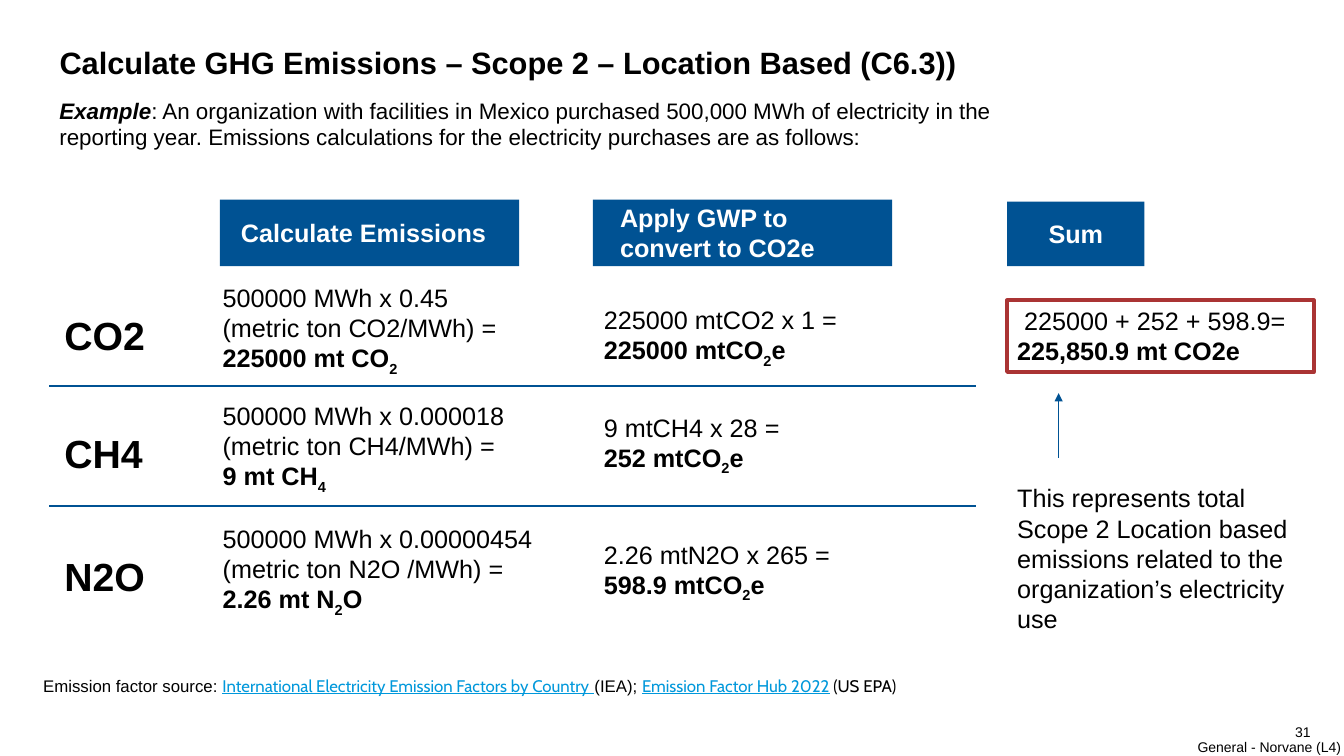
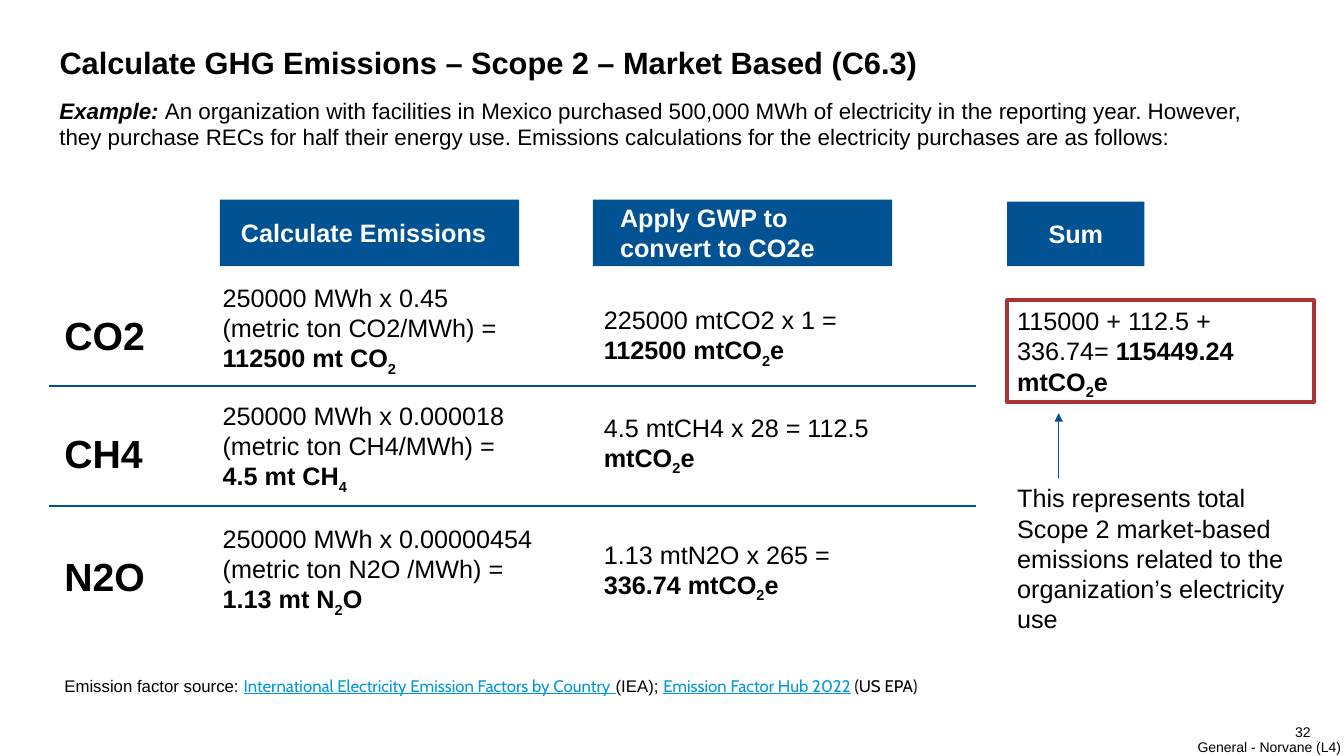
from lxml import etree
from pptx import Presentation
from pptx.dml.color import RGBColor
from pptx.enum.shapes import MSO_CONNECTOR, MSO_SHAPE
from pptx.enum.text import MSO_ANCHOR, MSO_AUTO_SIZE, PP_ALIGN
from pptx.oxml.ns import qn
from pptx.util import Inches, Pt

BLUE = RGBColor(0x00, 0x52, 0x93)
LINK = RGBColor(0x00, 0x98, 0xDB)
RED = RGBColor(0xAA, 0x34, 0x34)
BLACK = RGBColor(0x00, 0x00, 0x00)
WHITE = RGBColor(0xFF, 0xFF, 0xFF)
FONT = "Arial"
LINK_FONT = "Cabin"
RECTANGLE = MSO_SHAPE.RECTANGLE
STRAIGHT = MSO_CONNECTOR.STRAIGHT
TOP, MIDDLE, BOTTOM = MSO_ANCHOR.TOP, MSO_ANCHOR.MIDDLE, MSO_ANCHOR.BOTTOM
LEFT, RIGHT = PP_ALIGN.LEFT, PP_ALIGN.RIGHT
NO_AUTOFIT = MSO_AUTO_SIZE.NONE
TITLE_LAYOUT = 5

INSETS = (0.1, 0.05, 0.1, 0.05)
TITLE_AREA = (0.49, 0.1, 12.36, 0.75)
GRID_AREA = (0.49, 1.98, 9.19, 4.17)
SUM_AREA = (9.99, 2, 3.04, 4.36)
GASES = ("CO2", "CH4", "N2O")
ROW_TOPS = (0.77, 1.94, 3.16)
EMISSION_WIDTHS = (3.03, 3.03, 3.31)
GWP_SHIFTS = (0.22, 0.12, 0.16)
DIVIDERS = (1.85, 3.04)

SLIDES = [
    {
        "number": "31",
        "title": "Calculate GHG Emissions – Scope 2 – Location Based (C6.3))",
        "lead": "Example",
        "intro": ": An organization with facilities in Mexico purchased 500,000 MWh of "
                 "electricity in the reporting year. Emissions calculations for the "
                 "electricity purchases are as follows:",
        "intro_width": 9.81,
        "emissions": [
            ("500000 MWh x 0.45 (metric ton CO2/MWh) = ", "225000 mt CO_2"),
            ("500000 MWh x 0.000018 (metric ton CH4/MWh) = ", "9 mt CH_4"),
            ("500000 MWh x 0.00000454 (metric ton N2O /MWh) = ", "2.26 mt N_2_O"),
        ],
        "equivalents": [
            ("225000 mtCO2 x 1 = ", "225000 mtCO_2_e"),
            ("9 mtCH4 x 28 = ", "252 mtCO_2_e"),
            ("2.26 mtN2O x 265 = ", "598.9 mtCO_2_e"),
        ],
        "gwp_widths": (3.07, 2.3, 3.04),
        "sum": (" 225000 + 252 + 598.9= ", "225,850.9 mt CO2e"),
        "sum_height": 0.71,
        "arrow_top": 1.9,
        "note": "This represents total Scope 2 Location based emissions related to "
                "the organization’s electricity use",
        "source_left": 0.33,
    },
    {
        "number": "32",
        "title": "Calculate GHG Emissions – Scope 2 – Market Based (C6.3)",
        "lead": "Example: ",
        "intro": "An organization with facilities in Mexico purchased 500,000 MWh of "
                 "electricity in the reporting year. However, they purchase RECs for "
                 "half their energy use. Emissions calculations for the electricity "
                 "purchases are as follows:",
        "intro_width": 12.19,
        "emissions": [
            ("250000 MWh x 0.45 (metric ton CO2/MWh) = ", "112500 mt CO_2"),
            ("250000 MWh x 0.000018 (metric ton CH4/MWh) = ", "4.5 mt CH_4"),
            ("250000 MWh x 0.00000454 (metric ton N2O /MWh) = ", "1.13 mt N_2_O"),
        ],
        "equivalents": [
            ("225000 mtCO2 x 1 = ", "112500 mtCO_2_e"),
            ("4.5 mtCH4 x 28 = 112.5 ", "mtCO_2_e"),
            ("1.13 mtN2O x 265 = ", "336.74 mtCO_2_e"),
        ],
        "gwp_widths": (3.07, 3.07, 3.04),
        "sum": ("115000 + 112.5 + 336.74= ", "115449.24 mtCO_2_e"),
        "sum_height": 1.01,
        "arrow_top": 2.1,
        "note": "This represents total Scope 2 market-based emissions related to "
                "the organization’s electricity use",
        "source_left": 0.54,
    },
]


def write_text(box, text, size=18, color=BLACK, bold=False, align=LEFT,
               anchor=TOP, insets=INSETS):
    frame = box.text_frame
    frame.word_wrap = True
    frame.auto_size = NO_AUTOFIT
    frame.vertical_anchor = anchor
    (frame.margin_left, frame.margin_top,
     frame.margin_right, frame.margin_bottom) = map(Inches, insets)
    para = frame.paragraphs[0]
    para.alignment = align
    spans = [(text, {})] if isinstance(text, str) else text
    for words, style in spans:
        span = para.add_run()
        span.text = words
        font = span.font
        font.name = style.get("font", FONT)
        font.size = Pt(size)
        font.bold = style.get("bold", bold)
        font.italic = style.get("italic", False)
        font.underline = style.get("underline", False)
        font.color.rgb = style.get("color", color)
        if style.get("subscript"):
            span._r.get_or_add_rPr().set("baseline", "-25000")


def add_text(page, area, text, **style):
    box = page.shapes.add_textbox(*map(Inches, area))
    write_text(box, text, **style)


def add_rectangle(page, area, text, fill=None, line=None, **style):
    box = page.shapes.add_shape(RECTANGLE, *map(Inches, area))
    box.shadow.inherit = False
    if fill is None:
        box.fill.background()
    else:
        box.fill.solid()
        box.fill.fore_color.rgb = fill
    if line is None:
        box.line.fill.background()
    else:
        box.line.color.rgb = line
        box.line.width = Pt(3)
    write_text(box, text, **style)


def add_line(page, start, end, width, arrow=False):
    line = page.shapes.add_connector(STRAIGHT, *map(Inches, start + end))
    line.line.color.rgb = BLUE
    line.line.width = Pt(width)
    if arrow:
        etree.SubElement(line.line._get_or_add_ln(), qn("a:tailEnd"), type="triangle")
    etree.SubElement(line._element.spPr, qn("a:effectLst"))


def formula(plain, result):
    parts = enumerate(result.split("_"))
    return [(plain, {})] + [
        (part, {"bold": True, "subscript": index % 2 == 1}) for index, part in parts
    ]


def add_heading(page, area, text, indent, right=0.1):
    add_rectangle(page, area, text, fill=BLUE, color=WHITE, bold=True,
                  anchor=MIDDLE, insets=(indent, 0, right, 0))


def add_title(page, area, content):
    left, top, width, height = area
    title = page.shapes.title
    title.left, title.top, title.width, title.height = map(Inches, area)
    write_text(title, content["title"], size=22, bold=True, anchor=BOTTOM)
    intro = [(content["lead"], {"bold": True, "italic": True}), (content["intro"], {})]
    add_text(page, (left, top + 0.81, content["intro_width"], 0.64), intro, size=16)


def add_gas_grid(page, area, content):
    left, top, width, height = area
    add_heading(page, (left + 1.69, top, 2.97, 0.66), "Calculate Emissions", 0.21)
    add_heading(page, (left + 5.39, top, 2.97, 0.66),
                "Apply GWP to convert to CO2e", 0.27, 0.26)
    rows = zip(GASES, ROW_TOPS, EMISSION_WIDTHS, GWP_SHIFTS,
               content["gwp_widths"], content["emissions"], content["equivalents"])
    for gas, offset, emission_width, shift, gwp_width, emission, equivalent in rows:
        row_top = top + offset
        add_text(page, (left + 0.05, row_top + 0.29, 1.35, 0.57), gas,
                 size=28, bold=True)
        add_text(page, (left + 1.62, row_top, emission_width, 1.01), formula(*emission))
        add_text(page, (left + 5.4, row_top + shift, gwp_width, 0.71),
                 formula(*equivalent))
    for offset in DIVIDERS:
        add_line(page, (left, top + offset), (left + width, top + offset), 2)


def add_sum(page, area, content):
    left, top, width, height = area
    add_heading(page, (left, top, 1.36, 0.64), "Sum", 0.41)
    add_rectangle(page, (left, top + 0.98, width, content["sum_height"]),
                  formula(*content["sum"]), line=RED)
    arrow_left = left + 0.51
    arrow_top = top + content["arrow_top"]
    add_line(page, (arrow_left, arrow_top + 0.64), (arrow_left, arrow_top), 1, arrow=True)
    add_text(page, (left, top + 2.74, width, 1.62), content["note"])


def add_source(page, area):
    link = {"font": LINK_FONT, "color": LINK, "underline": True}
    spans = [
        ("Emission factor source: ", {}),
        ("International Electricity Emission Factors by Country", link),
        (" ", {"color": LINK, "underline": True}),
        ("(IEA); ", {}),
        ("Emission Factor Hub 2022", link),
        (" (US EPA)", {"font": LINK_FONT}),
    ]
    add_text(page, area, spans, size=12)


def add_footer(page, number):
    add_text(page, (12.5, 7.16, 0.5, 0.2), number, size=10, align=RIGHT,
             anchor=MIDDLE, insets=(0, 0.05, 0, 0.05))
    add_text(page, (11.5, 7.33, 1.8, 0.17), "General - Norvane (L4)", size=10,
             align=RIGHT, insets=(0, 0, 0, 0))


def add_scope_slide(deck, content):
    page = deck.slides.add_slide(deck.slide_layouts[TITLE_LAYOUT])
    add_footer(page, content["number"])
    add_title(page, TITLE_AREA, content)
    add_gas_grid(page, GRID_AREA, content)
    add_sum(page, SUM_AREA, content)
    add_source(page, (content["source_left"], 6.65, 9.96, 0.3))


def main():
    deck = Presentation()
    deck.slide_width, deck.slide_height = Inches(13.33), Inches(7.5)
    for content in SLIDES:
        add_scope_slide(deck, content)
    deck.save("out.pptx")


if __name__ == "__main__":
    main()
